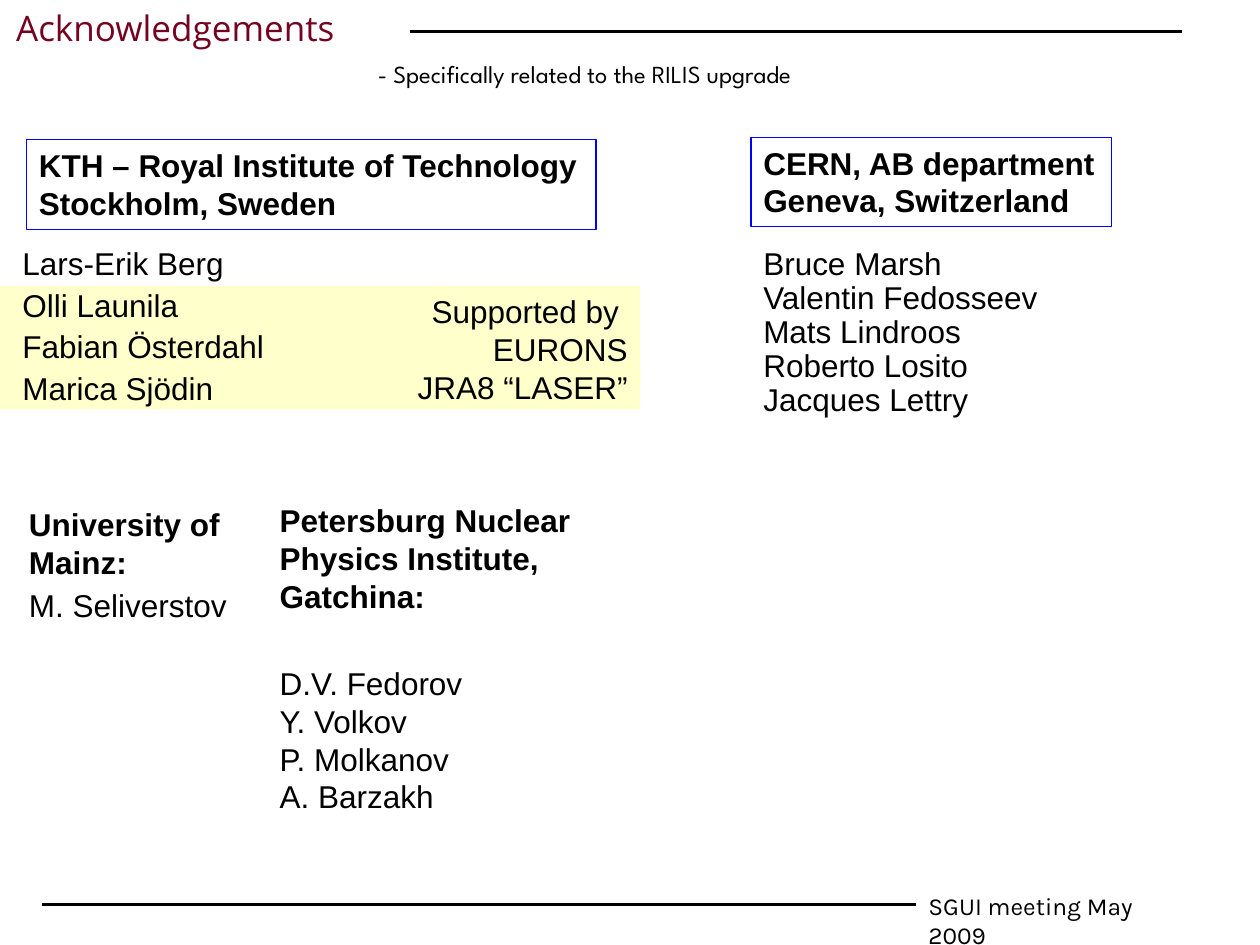
from lxml import etree
from pptx import Presentation
from pptx.dml.color import RGBColor
from pptx.enum.shapes import MSO_CONNECTOR, MSO_SHAPE
from pptx.enum.text import MSO_ANCHOR, PP_ALIGN
from pptx.oxml.ns import qn
from pptx.util import Inches, Pt

BLACK = RGBColor(0x00, 0x00, 0x00)
WHITE = RGBColor(0xFF, 0xFF, 0xFF)
MAROON = RGBColor(0x74, 0x03, 0x21)
BLUE = RGBColor(0x00, 0x00, 0xFF)
CREAM = RGBColor(0xFF, 0xFF, 0xCC)


def write_lines(frame, lines, size=18, font="Arial", color=BLACK, bold=False,
                align=PP_ALIGN.LEFT, spacing=None, gap=0, inset=None, wrap=True,
                anchor=MSO_ANCHOR.TOP):
    """Fill a text frame with one paragraph per line."""
    frame.word_wrap = wrap
    frame.vertical_anchor = anchor
    if inset is not None:
        frame.margin_left = frame.margin_right = Inches(inset)
        frame.margin_top = frame.margin_bottom = Inches(inset)
    for index, line in enumerate(lines):
        para = frame.add_paragraph() if index else frame.paragraphs[0]
        para.text = line
        para.alignment = align
        para.line_spacing = spacing
        if index and gap:
            para.space_before = Pt(gap)
        para.font.size = Pt(size)
        para.font.name = font
        para.font.bold = bold
        para.font.color.rgb = color


def add_text(page, left, top, width, height, lines, **style):
    """Place a text box with the given lines."""
    box = page.shapes.add_textbox(Inches(left), Inches(top), Inches(width), Inches(height))
    write_lines(box.text_frame, lines, **style)


def add_panel(page, left, top, width, height, lines, fill=None, line=None, **style):
    """Place a rectangle holding the given lines."""
    panel = page.shapes.add_shape(MSO_SHAPE.RECTANGLE, Inches(left), Inches(top),
                                  Inches(width), Inches(height))
    panel.shadow.inherit = False
    if fill is None:
        panel.fill.background()
    else:
        panel.fill.solid()
        panel.fill.fore_color.rgb = fill
    if line is None:
        panel.line.fill.background()
    else:
        panel.line.color.rgb = line
        panel.line.width = Pt(0.75)
    write_lines(panel.text_frame, lines, **style)


def add_rule(page, start, end, top):
    """Draw a horizontal black rule."""
    rule = page.shapes.add_connector(MSO_CONNECTOR.STRAIGHT, Inches(start), Inches(top),
                                     Inches(end), Inches(top))
    rule.line.color.rgb = BLACK
    rule.line.width = Pt(1.75)
    etree.SubElement(rule._element.spPr, qn("a:effectLst"))


def add_header(page, left, top):
    """Place the title, its rule and the subtitle."""
    add_text(page, left, top, 8.64, 0.43, ["Acknowledgements"],
             size=20, font="Open Sans", color=MAROON)
    add_text(page, left + 1.22, top + 0.42, 5.13, 0.34,
             ["- Specifically related to the RILIS upgrade"],
             size=14, font="League Spartan", align=PP_ALIGN.RIGHT)
    add_rule(page, left + 9.35, left + 3.22, top + 0.25)


def add_footer(page, left, top):
    """Place the footer rule and the meeting name."""
    add_rule(page, left + 6.94, left, top + 0.16)
    add_text(page, left + 6.94, top, 2.21, 0.33, ["SGUI meeting May 2009"],
             size=14, font="Karla")


def add_stockholm(page, left, top):
    """Place the Stockholm group with its supported members highlighted."""
    add_panel(page, left, top + 1.16, 5.08, 0.98,
              ["Supported by ", "EURONS", "JRA8 “LASER”"],
              fill=CREAM, align=PP_ALIGN.RIGHT)
    add_text(page, left + 0.08, top + 0.81, 3.87, 1.98,
             ["Lars-Erik Berg", "Olli Launila", "Fabian Österdahl", "Marica Sjödin"],
             spacing=0.9, gap=4.4)
    add_panel(page, left + 0.21, top, 4.52, 0.71,
              ["KTH – Royal Institute of Technology", "Stockholm, Sweden"],
              line=BLUE, bold=True, wrap=False)


def add_geneva(page, left, top):
    """Place the Geneva group."""
    add_panel(page, left, top, 2.86, 0.71, ["CERN, AB department", "Geneva, Switzerland"],
              line=BLUE, bold=True, wrap=False)
    add_text(page, left, top + 0.83, 2.86, 1.6,
             ["Bruce Marsh", "Valentin Fedosseev", "Mats Lindroos", "Roberto Losito",
              "Jacques Lettry"], spacing=0.9)


def add_partner(page, left, top, width, heading, names, names_drop):
    """Place a bold institute heading with its members below."""
    add_text(page, left, top, width, 0.61, heading, bold=True, inset=0)
    add_text(page, left, top + names_drop, width, 0.3 * len(names), names, inset=0)


def main():
    """Build the acknowledgements slide."""
    deck = Presentation()
    deck.slide_width, deck.slide_height = Inches(10), Inches(7.5)
    page = deck.slides.add_slide(deck.slide_layouts[6])
    page.background.fill.solid()
    page.background.fill.fore_color.rgb = WHITE
    add_footer(page, 0.33, 7.02)
    add_header(page, 0.03, 0)
    add_stockholm(page, 0, 1.11)
    add_geneva(page, 5.96, 1.09)
    add_partner(page, 0.23, 4.01, 1.7, ["University of", "Mainz:"], ["M. Seliverstov"], 0.64)
    add_partner(page, 2.22, 3.98, 3.15, ["Petersburg Nuclear Physics Institute, Gatchina:"],
                ["D.V. Fedorov", "Y. Volkov", "P. Molkanov", "A. Barzakh"], 1.29)
    deck.save("out.pptx")


if __name__ == "__main__":
    main()
